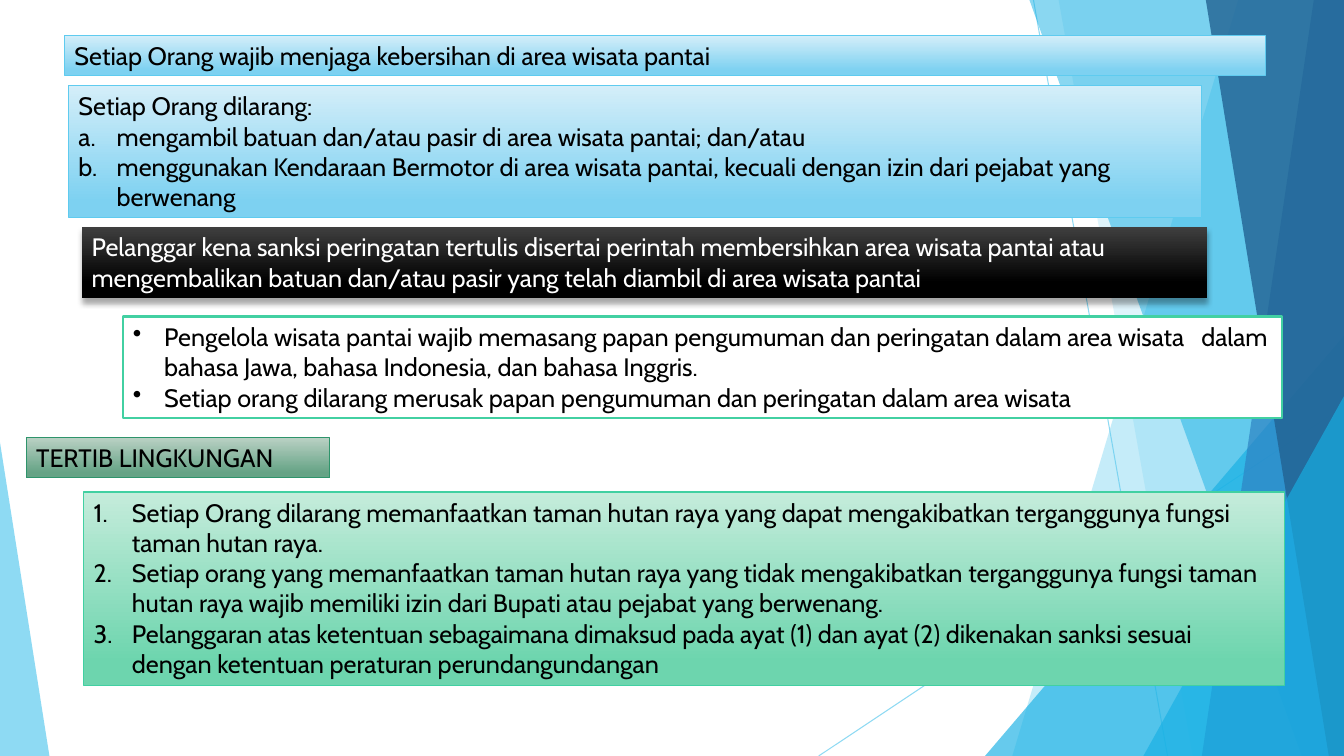
import pptx
import pptx.dml.color
import pptx.enum.shapes
import pptx.oxml
import pptx.oxml.ns
import pptx.util
from lxml import etree

Inches = pptx.util.Inches
Pt = pptx.util.Pt
RGBColor = pptx.dml.color.RGBColor
qn = pptx.oxml.ns.qn

BLACK = RGBColor(0x00, 0x00, 0x00)
WHITE = RGBColor(0xFF, 0xFF, 0xFF)
CHARCOAL = RGBColor(0x3F, 0x3F, 0x3F)
SKY = RGBColor(0x5F, 0xCB, 0xEF)
SKY_PALE = RGBColor(0xD4, 0xEE, 0xF9)
SKY_SOFT = RGBColor(0x7D, 0xD1, 0xF1)
AZURE = RGBColor(0x17, 0xB0, 0xE4)
BLUE = RGBColor(0x2E, 0x83, 0xC3)
NAVY = RGBColor(0x22, 0x62, 0x92)
MINT = RGBColor(0x42, 0xD0, 0xA2)
MINT_PALE = RGBColor(0xC5, 0xEC, 0xDB)
MINT_SOFT = RGBColor(0x6D, 0xD5, 0xAE)
GREEN = RGBColor(0x2E, 0x94, 0x6B)
GREEN_PALE = RGBColor(0xBA, 0xD1, 0xC4)
GREEN_SOFT = RGBColor(0x65, 0xA3, 0x85)

WIDTH, HEIGHT = 13.33, 7.5
FONT, TEXT_SIZE = "Cabin", 18

# Background, back to front
RAYS = [(10.25, 0, 11.58, HEIGHT), (WIDTH, 4.03, 8.12, HEIGHT)]
# "panel": top-left x, bottom-left x; "triangle": left, top, width, apex
FACETS = [
    ("panel", (12.28, 10.04), SKY, 36),
    ("panel", (10.5, 11.83), SKY, 20),
    ("triangle", (9.77, 3.33, 3.56, 1), AZURE, 66),
    ("panel", (10.21, 12.91), AZURE, 50),
    ("panel", (13.03, 11.92), BLUE, 70),
    ("panel", (11.96, 13.18), NAVY, 80),
    ("triangle", (11.34, 3.93, 1.99, 1), AZURE, 66),
    ("triangle", (0, 4.39, 0.49, 0), SKY, 70),
]

# List styles: indent, bullet tag, bullet attributes
LETTERS = (0.38, "a:buAutoNum", {"type": "alphaLcPeriod"})
NUMBERS = (0.38, "a:buAutoNum", {"type": "arabicPeriod"})
DOTS = (0.31, "a:buChar", {"char": "•"})

SKY_FILL = (SKY_PALE, SKY_SOFT, 0.88)
BOXES = [
    dict(box=(0.64, 0.35, 11.91, 0.4), fill=SKY_FILL, line=(SKY, 1), paragraphs=[
        (None, "Setiap Orang wajib menjaga kebersihan di area wisata pantai")]),
    dict(box=(0.68, 0.85, 11.24, 1.31), fill=SKY_FILL, line=(SKY, 1), paragraphs=[
        (None, "Setiap Orang dilarang:"),
        (LETTERS, "mengambil batuan dan/atau pasir di area wisata pantai; dan/atau"),
        (LETTERS, "menggunakan Kendaraan Bermotor di area wisata pantai, kecuali dengan "
                  "izin dari pejabat yang berwenang")]),
    dict(box=(0.81, 2.25, 11.16, 0.71), fill=(CHARCOAL, BLACK, 0.78), line=None,
         color=WHITE, shadow=True, paragraphs=[
        (None, "Pelanggar kena sanksi peringatan tertulis disertai perintah membersihkan "
               "area wisata pantai atau mengembalikan batuan dan/atau pasir yang telah "
               "diambil di area wisata pantai")]),
    dict(box=(1.22, 3.14, 11.5, 1.01), fill=WHITE, line=(MINT, 1.5), paragraphs=[
        (DOTS, "Pengelola wisata pantai wajib memasang papan pengumuman dan peringatan "
               "dalam area wisata   dalam bahasa Jawa, bahasa Indonesia, dan bahasa Inggris."),
        (DOTS, "Setiap orang dilarang merusak papan pengumuman dan peringatan dalam "
               "area wisata")]),
    dict(box=(0.26, 4.34, 3.01, 0.4), fill=(GREEN_PALE, GREEN_SOFT, 0.88),
         line=(GREEN, 1), paragraphs=[(None, "TERTIB LINGKUNGAN")]),
    dict(box=(0.83, 4.88, 11.91, 1.92), fill=(MINT_PALE, MINT_SOFT, 0.88),
         line=(MINT, 1), paragraphs=[
        (NUMBERS, "Setiap Orang dilarang memanfaatkan taman hutan raya yang dapat "
                  "mengakibatkan terganggunya fungsi taman hutan raya."),
        (NUMBERS, "Setiap orang yang memanfaatkan taman hutan raya yang tidak mengakibatkan "
                  "terganggunya fungsi taman hutan raya wajib memiliki izin dari Bupati "
                  "atau pejabat yang berwenang."),
        (NUMBERS, "Pelanggaran atas ketentuan sebagaimana dimaksud pada ayat (1) dan ayat "
                  "(2) dikenakan sanksi sesuai dengan ketentuan peraturan "
                  "perundangundangan")]),
]


def add_element(parent, tag, **attributes):
    return etree.SubElement(parent, qn(tag), attributes)


def paint(fill, color, opacity):
    """Set a solid fill with the opacity in percent."""
    fill.solid()
    fill.fore_color.rgb = color
    color_element = fill._xPr.find(".//" + qn("a:srgbClr"))
    add_element(color_element, "a:alpha", val=str(opacity * 1000))


def add_ray(slide, ends):
    ray = slide.shapes.add_connector(
        pptx.enum.shapes.MSO_CONNECTOR.STRAIGHT, *map(Inches, ends))
    ray.line.width = Pt(0.75)
    paint(ray.line.fill, SKY, 70)
    add_element(ray._element.spPr, "a:effectLst")


def add_facet(slide, kind, place, color, opacity):
    if kind == "panel":
        top_x, bottom_x = place
        builder = slide.shapes.build_freeform(Inches(top_x), 0)
        corners = [(WIDTH, 0), (WIDTH, HEIGHT), (bottom_x, HEIGHT)]
        builder.add_line_segments([(Inches(x), Inches(y)) for x, y in corners])
        facet = builder.convert_to_shape()
    else:
        left, top, width, apex = place
        facet = slide.shapes.add_shape(
            pptx.enum.shapes.MSO_SHAPE.ISOSCELES_TRIANGLE,
            *map(Inches, (left, top, width, HEIGHT - top)))
        facet.adjustments[0] = apex
    paint(facet.fill, color, opacity)
    facet.line.fill.background()
    facet.shadow.inherit = False


def fill_down(fill, start, end, end_position):
    """Set a gradient that runs from top to bottom."""
    fill.gradient()
    fill.gradient_angle = 270
    first, last = fill.gradient_stops
    first.color.rgb, first.position = start, 0
    last.color.rgb, last.position = end, end_position


def add_shadow(shape):
    effects = add_element(shape._element.spPr, "a:effectLst")
    shadow = add_element(effects, "a:outerShdw", blurRad=str(Pt(4)), dist=str(Pt(3)),
                         dir="5400000", rotWithShape="0")
    color = add_element(shadow, "a:srgbClr", val=str(BLACK))
    add_element(color, "a:alpha", val="35000")


def add_box(slide, box, fill, line, paragraphs, color=BLACK, shadow=False):
    shape = slide.shapes.add_textbox(*map(Inches, box))
    if isinstance(fill, RGBColor):
        shape.fill.solid()
        shape.fill.fore_color.rgb = fill
    else:
        fill_down(shape.fill, *fill)
    if line:
        shape.line.color.rgb = line[0]
        shape.line.width = Pt(line[1])
    else:
        shape.line.fill.background()
    if shadow:
        add_shadow(shape)

    frame = shape.text_frame
    frame.word_wrap = True
    for index, (style, text) in enumerate(paragraphs):
        paragraph = frame.add_paragraph() if index else frame.paragraphs[0]
        if style:
            indent, tag, attributes = style
            properties = paragraph._p.get_or_add_pPr()
            properties.set("marL", str(Inches(indent)))
            properties.set("indent", str(-Inches(indent)))
            add_element(properties, tag, **attributes)
        run = paragraph.add_run()
        run.text = text
        run.font.name = FONT
        run.font.size = Pt(TEXT_SIZE)
        run.font.color.rgb = color


def main():
    presentation = pptx.Presentation()
    presentation.slide_width = Inches(WIDTH)
    presentation.slide_height = Inches(HEIGHT)
    slide = presentation.slides.add_slide(presentation.slide_layouts[6])
    for ends in RAYS:
        add_ray(slide, ends)
    for facet in FACETS:
        add_facet(slide, *facet)
    for box in BOXES:
        add_box(slide, **box)
    presentation.save("out.pptx")


if __name__ == "__main__":
    main()
